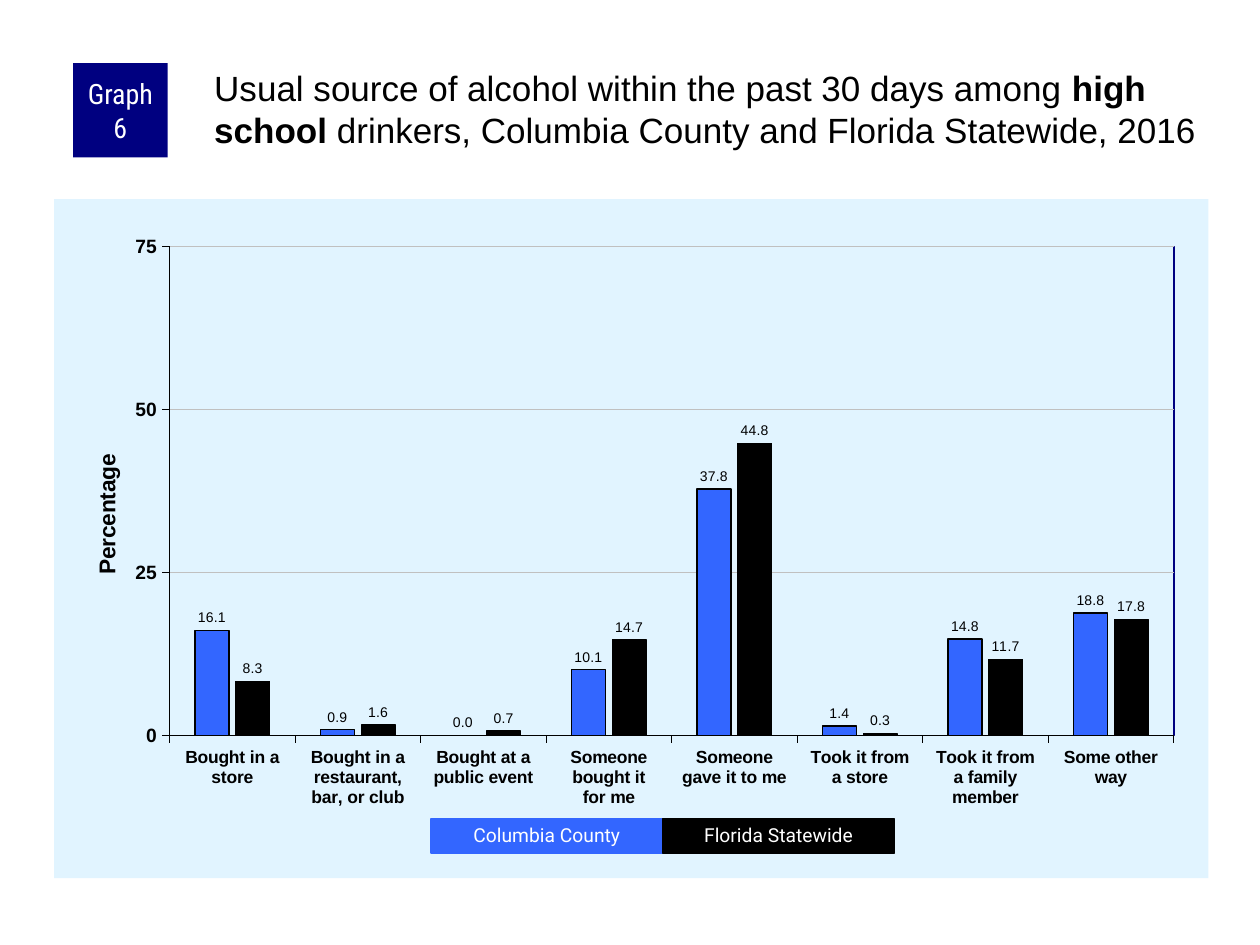
from lxml import etree
from pptx import Presentation
from pptx.chart.data import CategoryChartData
from pptx.dml.color import RGBColor
from pptx.enum.chart import XL_CHART_TYPE as ChartType
from pptx.enum.chart import XL_LABEL_POSITION as LabelPosition
from pptx.enum.chart import XL_TICK_MARK as TickMark
from pptx.enum.shapes import MSO_SHAPE as Preset
from pptx.enum.text import MSO_ANCHOR as Anchor
from pptx.enum.text import PP_ALIGN as Align
from pptx.oxml import parse_xml
from pptx.oxml.ns import nsdecls, qn
from pptx.util import Pt

EMU_PER_PX = 9144  # 100 px to the inch
WHITE = RGBColor(0xFF, 0xFF, 0xFF)
BLACK = RGBColor(0x00, 0x00, 0x00)
NAVY = RGBColor(0x00, 0x00, 0x80)
BLUE = RGBColor(0x33, 0x66, 0xFF)
PALE_BLUE = RGBColor(0xE1, 0xF4, 0xFF)
GRID_GREY = RGBColor(0xC0, 0xC0, 0xC0)

CATEGORIES = [
    "Bought in a store", "Bought in a restaurant, bar, or club",
    "Bought at a public event", "Someone bought it\nfor me",
    "Someone\ngave it to me", "Took it from\na store",
    "Took it from\na family member", "Some other way",
]
# name, colour, outline in points, values
SERIES = [
    ("Columbia County", BLUE, 1, (16.1, 0.9, 0, 10.1, 37.8, 1.4, 14.8, 18.8)),
    ("Florida Statewide", BLACK, 0.75, (8.3, 1.6, 0.7, 14.7, 44.8, 0.3, 11.7, 17.8)),
]


def px(*lengths):
    return [length * EMU_PER_PX for length in lengths]


def set_font(font, name, size, color, bold=False):
    font.name, font.size, font.bold = name, Pt(size), bold
    font.color.rgb = color


def set_line(line, color, width):
    line.color.rgb = color
    line.width = Pt(width)


def add_label_box(slide, box, text, fill, font_name, size):
    """Filled rectangle with centred white text."""
    shape = slide.shapes.add_shape(Preset.RECTANGLE, *px(*box))
    shape.shadow.inherit = False
    shape.fill.solid()
    shape.fill.fore_color.rgb = fill
    shape.line.fill.background()
    frame = shape.text_frame
    frame.word_wrap = True
    frame.vertical_anchor = Anchor.MIDDLE
    frame.margin_left = frame.margin_right = px(5)[0]
    frame.margin_top = frame.margin_bottom = 0
    paragraph = frame.paragraphs[0]
    paragraph.text = text
    paragraph.alignment = Align.CENTER
    set_font(paragraph.font, font_name, size, WHITE)
    return shape


def add_header(slide, left, top, width, height):
    badge_size = 75
    add_label_box(slide, (left, top, badge_size, badge_size), "Graph 6",
                  NAVY, "Roboto Condensed", 16)
    title_offset = 109
    title = slide.shapes.add_textbox(
        *px(left + title_offset, top, width - title_offset, height))
    frame = title.text_frame
    frame.word_wrap = True
    frame.margin_left = frame.margin_top = px(3)[0]
    frame.margin_right = frame.margin_bottom = 0
    paragraph = frame.paragraphs[0]
    set_font(paragraph.font, "Arial", 20, BLACK)
    for text, bold in (
        ("Usual source of alcohol within the past 30 days among ", False),
        ("high school", True),
        (" drinkers, Columbia County and Florida Statewide, 2016", False),
    ):
        run = paragraph.add_run()
        run.text = text
        run.font.bold = bold


def manual_layout(x, y, width=None, height=None):
    """Chart layout element; the values are fractions of the chart."""
    layout = etree.Element(qn("c:layout"))
    manual = etree.SubElement(layout, qn("c:manualLayout"))
    entries = [("xMode", "edge"), ("yMode", "edge"), ("x", x), ("y", y)]
    if width is not None:
        entries = [("layoutTarget", "inner"), *entries, ("w", width), ("h", height)]
    for tag, value in entries:
        etree.SubElement(manual, qn(f"c:{tag}")).set("val", str(value))
    return layout


def replace_layout(parent, layout, index):
    for old in parent.findall(qn("c:layout")):
        parent.remove(old)
    parent.insert(index, layout)


def area_format(fill, line):
    return parse_xml(f'<c:spPr {nsdecls("c", "a")}>{fill}<a:ln w="12700">{line}</a:ln></c:spPr>')


def solid(color):
    return f'<a:solidFill><a:srgbClr val="{color}"/></a:solidFill>'


def format_axes(chart):
    for axis, size in ((chart.category_axis, 10), (chart.value_axis, 11)):
        axis.major_tick_mark = TickMark.OUTSIDE
        axis.minor_tick_mark = TickMark.NONE
        set_font(axis.tick_labels.font, "Arial", size, BLACK, True)
        set_line(axis.format.line, BLACK, 0.25)
    axis = chart.value_axis
    axis.minimum_scale, axis.maximum_scale, axis.major_unit = 0, 75, 25
    axis.tick_labels.number_format = "0"
    axis.tick_labels.number_format_is_linked = False
    set_line(axis.major_gridlines.format.line, GRID_GREY, 0.25)
    paragraph = axis.axis_title.text_frame.paragraphs[0]
    paragraph.text = "Percentage"
    set_font(paragraph.font, "Arial", 13, BLACK, True)
    title = axis.axis_title._element
    replace_layout(title, manual_layout(0.03, 0.37), 1)


def add_source_chart(slide, box):
    data = CategoryChartData(number_format="0.0")
    data.categories = CATEGORIES
    for name, _, _, values in SERIES:
        data.add_series(name, values)
    chart = slide.shapes.add_chart(ChartType.COLUMN_CLUSTERED, *px(*box), data).chart
    chart.has_legend = chart.has_title = False
    set_font(chart.font, "Arial", 11.5, BLACK)
    format_axes(chart)

    plot = chart.plots[0]
    plot.gap_width, plot.overlap = 150, -20
    plot.vary_by_categories = False
    for series, (_, color, width, _) in zip(plot.series, SERIES):
        series.invert_if_negative = False
        series.format.fill.solid()
        series.format.fill.fore_color.rgb = color
        set_line(series.format.line, BLACK, width)
        labels = series.data_labels
        labels.show_value = True
        labels.position = LabelPosition.OUTSIDE_END
        labels.number_format = "0.0"
        labels.number_format_is_linked = False
        set_font(labels.font, "Arial", 8, BLACK)

    chart_space = chart._chartSpace
    plot_area = chart_space.chart.plotArea
    replace_layout(plot_area, manual_layout(0.1, 0.07, 0.87, 0.72), 0)
    plot_area.append(area_format("<a:noFill/>", solid(NAVY)))
    chart_space.chart.addnext(area_format(solid(PALE_BLUE), "<a:noFill/>"))


def add_legend(slide, left, top, width, height):
    key_width = width // len(SERIES)
    for index, (name, color, _, _) in enumerate(SERIES):
        box = (left + index * key_width, top, key_width, height)
        key = add_label_box(slide, box, name, color, "Roboto", 11)
        set_line(key.line, color, 0.75)
        key.text_frame.paragraphs[0].line_spacing = 0.9


def main():
    presentation = Presentation()
    presentation.slide_width, presentation.slide_height = px(1000, 750)
    slide = presentation.slides.add_slide(presentation.slide_layouts[6])
    add_source_chart(slide, (43, 158, 916, 539))
    add_header(slide, 58, 50, 901, 83)
    add_legend(slide, 342, 650, 368, 27)
    presentation.save("out.pptx")


if __name__ == "__main__":
    main()
